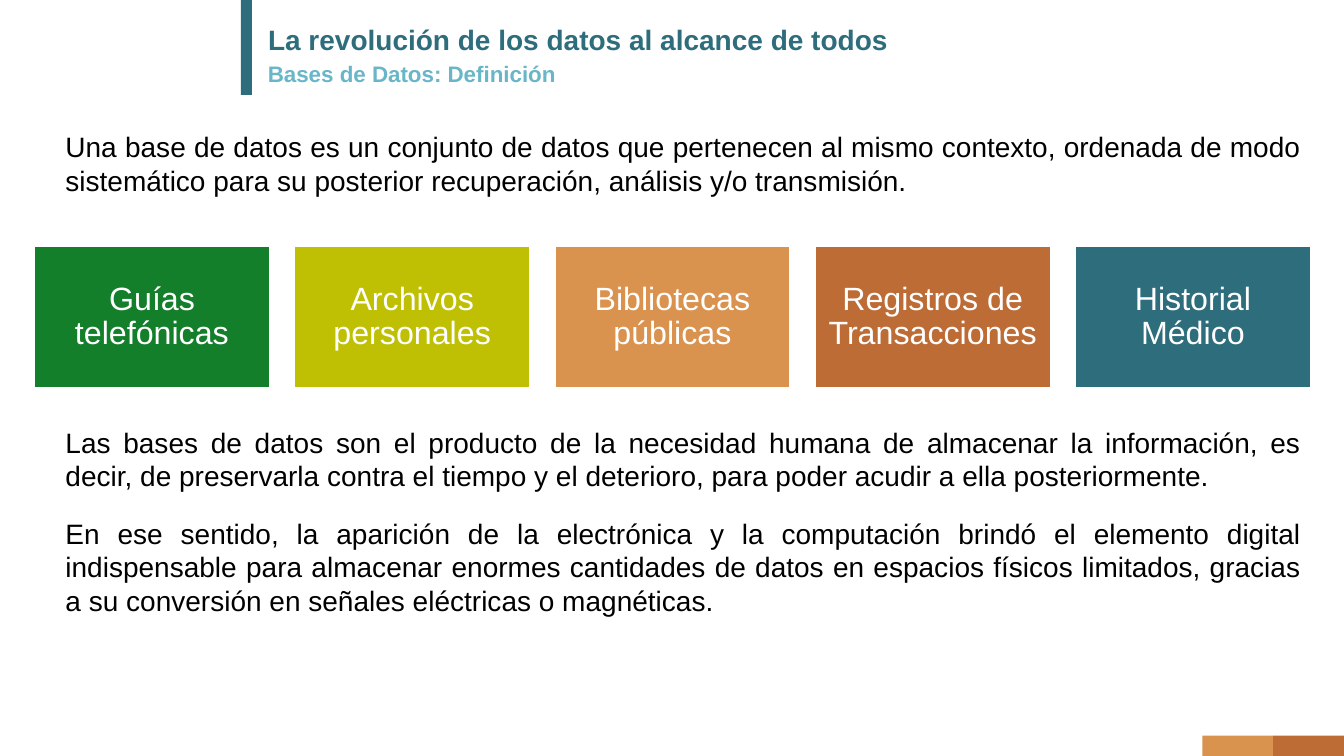
import pptx
import pptx.util
import pptx.dml.color
import pptx.enum.shapes
import pptx.enum.text
from dataclasses import dataclass

Cm, Pt = pptx.util.Cm, pptx.util.Pt
ALIGN = pptx.enum.text.PP_ALIGN
ANCHOR = pptx.enum.text.MSO_ANCHOR


@dataclass(frozen=True)
class Theme:
    font: str = "Arial"
    teal: str = "2D6D7C"
    sky: str = "69B6C9"
    green: str = "137F2B"
    lime: str = "BFBF04"
    sand: str = "DA924F"
    rust: str = "BD6C36"
    black: str = "000000"
    white: str = "FFFFFF"
    title_size: int = 20
    subtitle_size: int = 16
    body_size: int = 20
    card_size: int = 23


THEME = Theme()

DEFINITION = (
    "Una base de datos es un conjunto de datos que pertenecen al mismo contexto, "
    "ordenada de modo sistemático para su posterior recuperación, análisis y/o transmisión.")
ORIGIN = (
    "Las bases de datos son el producto de la necesidad humana de almacenar la información, "
    "es decir, de preservarla contra el tiempo y el deterioro, "
    "para poder acudir a ella posteriormente.")
DIGITAL = (
    "En ese sentido, la aparición de la electrónica y la computación brindó el elemento "
    "digital indispensable para almacenar enormes cantidades de datos en espacios físicos "
    "limitados, gracias a su conversión en señales eléctricas o magnéticas.")


def rgb(color):
    return pptx.dml.color.RGBColor.from_string(color)


def write(sp, text, size, color, align=ALIGN.LEFT, bold=False, spacing=1.0, anchor=ANCHOR.TOP):
    tf = sp.text_frame
    tf.word_wrap = True
    tf.auto_size = pptx.enum.text.MSO_AUTO_SIZE.NONE
    tf.vertical_anchor = anchor
    p = tf.paragraphs[0]
    p.text = text
    p.alignment = align
    p.line_spacing = spacing
    p.font.name = THEME.font
    p.font.size = Pt(size)
    p.font.bold = bold
    p.font.color.rgb = rgb(color)


def add_block(s, x, y, w, h, color):
    sp = s.shapes.add_shape(pptx.enum.shapes.MSO_SHAPE.RECTANGLE, Cm(x), Cm(y), Cm(w), Cm(h))
    sp.shadow.inherit = False
    sp.fill.solid()
    sp.fill.fore_color.rgb = rgb(color)
    sp.line.fill.background()
    return sp


def add_header(s, x, y, w, title, subtitle):
    # Vertical bar beside the headings
    add_block(s, x, y, 0.28, 2.39, THEME.teal)
    text_x, text_w, text_h = x + 0.43, w - 0.43, 1.02

    sp = s.shapes.title
    sp.left, sp.top, sp.width, sp.height = Cm(text_x), Cm(y + 0.53), Cm(text_w), Cm(text_h)
    write(sp, title, THEME.title_size, THEME.teal, bold=True, spacing=0.9)

    sp = s.shapes.add_textbox(Cm(text_x), Cm(y + 1.47), Cm(text_w), Cm(text_h))
    write(sp, subtitle, THEME.subtitle_size, THEME.sky, bold=True, spacing=0.9)


def add_body(s, x, y, w, h, text):
    sp = s.shapes.add_textbox(Cm(x), Cm(y), Cm(w), Cm(h))
    write(sp, text, THEME.body_size, THEME.black, ALIGN.JUSTIFY)


def add_cards(s, x, y, w, h, cards, gap=0.63):
    card_w = (w - gap * (len(cards) - 1)) / len(cards)
    for i, (text, color) in enumerate(cards):
        sp = add_block(s, x + i * (card_w + gap), y, card_w, h, color)
        sp.line.color.rgb = rgb(THEME.white)
        sp.line.width = Pt(1)
        tf = sp.text_frame
        tf.margin_left = tf.margin_right = tf.margin_top = tf.margin_bottom = Cm(0.23)
        write(sp, text, THEME.card_size, THEME.white, ALIGN.CENTER,
              spacing=0.9, anchor=ANCHOR.MIDDLE)


def add_footer(s, x, y, w, h):
    for i, color in enumerate((THEME.sand, THEME.rust)):
        add_block(s, x + i * w / 2, y, w / 2, h, color)


def main():
    prs = pptx.Presentation()
    prs.slide_width, prs.slide_height = Cm(33.87), Cm(19.05)
    s = prs.slides.add_slide(prs.slide_layouts.get_by_name("Title Only"))

    add_header(s, 6.07, 0, 26.97,
               "La revolución de los datos al alcance de todos", "Bases de Datos: Definición")
    add_footer(s, 30.3, 18.54, 3.57, 0.51)

    # Definition, examples and background
    add_body(s, 1.4, 3.15, 31.65, 1.96, DEFINITION)
    add_cards(s, 0.87, 6.2, 32.16, 3.58, [
        ("Guías telefónicas", THEME.green),
        ("Archivos personales", THEME.lime),
        ("Bibliotecas públicas", THEME.sand),
        ("Registros de Transacciones", THEME.rust),
        ("Historial Médico", THEME.teal),
    ])
    add_body(s, 1.4, 10.59, 31.65, 1.96, ORIGIN)
    add_body(s, 1.4, 12.88, 31.65, 2.82, DIGITAL)

    prs.save("out.pptx")


if __name__ == "__main__":
    main()
